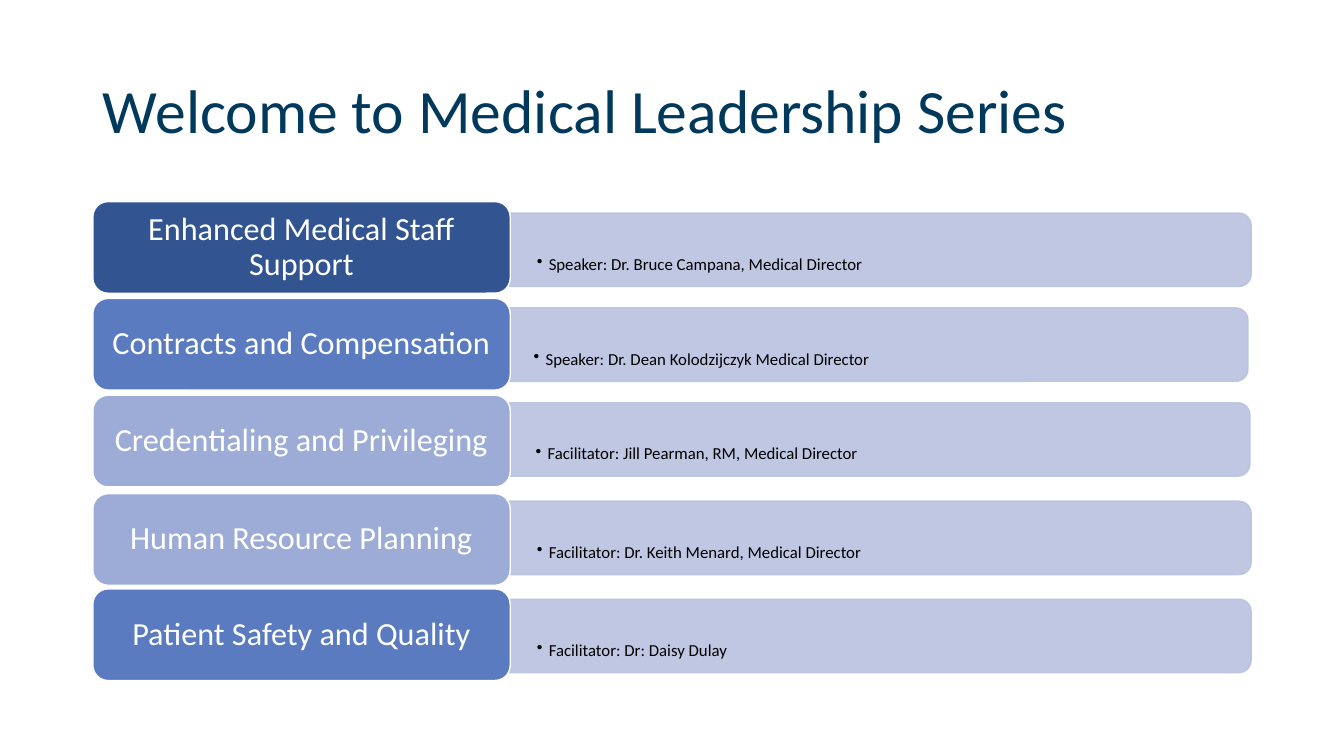
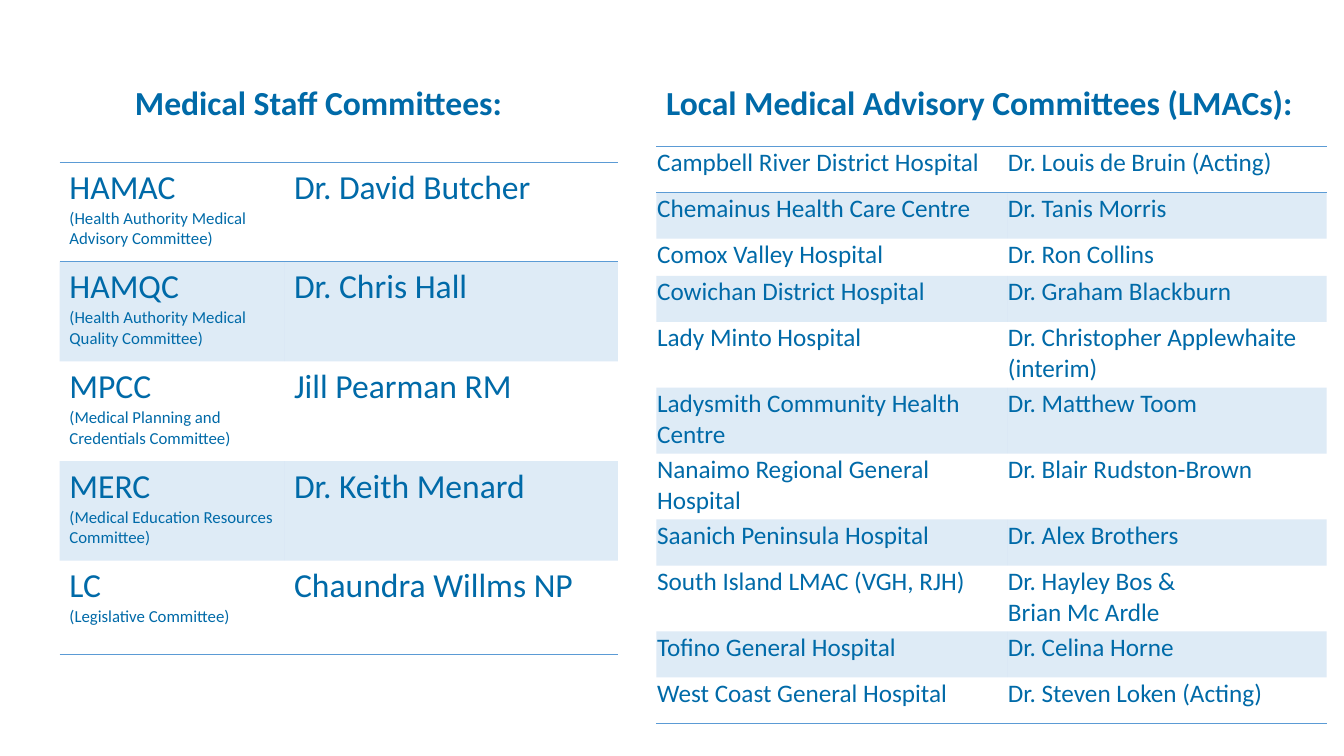
from dataclasses import dataclass

import lxml.etree
import pptx
import pptx.dml.color
import pptx.enum.shapes
import pptx.enum.text
import pptx.oxml.ns
import pptx.shapes.autoshape
import pptx.slide
import pptx.table
import pptx.text.text
import pptx.util

Cm = pptx.util.Cm
Pt = pptx.util.Pt
qn = pptx.oxml.ns.qn
Anchor = pptx.enum.text.MSO_ANCHOR
Align = pptx.enum.text.PP_ALIGN
Shape = pptx.enum.shapes.MSO_SHAPE


@dataclass(frozen=True)
class Theme:
    font: str = "Calibri"
    title: str = "00395B"
    committee: str = "006AA8"
    rule: str = "5B9BD5"
    bar: str = "B9C2E1"
    navy: str = "325491"
    blue: str = "5B7BC0"
    pale: str = "9DACD6"
    white: str = "FFFFFF"
    black: str = "000000"
    title_size: int = 44
    heading_size: int = 24
    label_size: int = 23
    body_size: int = 18
    small_size: int = 12
    bar_alpha: int = 90
    band_alpha: int = 20


THEME = Theme()


@dataclass(frozen=True)
class Session:
    topic: str
    host: str
    colour: str
    label_top: float
    bar_top: float
    bar_left: float = 12.84


@dataclass(frozen=True)
class Committee:
    name: str
    chair: str
    height: float


@dataclass(frozen=True)
class CommitteeTable:
    heading: str
    heading_left: float
    heading_width: float
    left: float
    top: float
    widths: tuple[float, float]
    margins: tuple[float, float, float, float]
    sizes: tuple[int, int]
    rows: list[Committee]


SESSIONS = [
    Session("Enhanced Medical Staff Support", "Speaker: Dr. Bruce Campana, Medical Director",
            THEME.navy, 5.08, 5.37),
    Session("Contracts and Compensation", "Speaker: Dr. Dean Kolodzijczyk Medical Director",
            THEME.blue, 7.52, 7.76, 12.76),
    Session("Credentialing and Privileging", "Facilitator: Jill Pearman, RM, Medical Director",
            THEME.pale, 9.96, 10.15, 12.81),
    Session("Human Resource Planning", "Facilitator: Dr. Keith Menard, Medical Director",
            THEME.pale, 12.44, 12.63),
    Session("Patient Safety and Quality", "Facilitator: Dr: Daisy Dulay",
            THEME.blue, 14.84, 15.1),
]
LABEL_LEFT, LABEL_WIDTH, LABEL_HEIGHT = 2.34, 10.52, 2.31
BAR_WIDTH, BAR_HEIGHT = 18.69, 1.85

SHORT, ONE_LINE, TWO_LINES = 0.94, 1.16, 1.66

STAFF = CommitteeTable(
    "Medical Staff Committees:", 3.15, 9.91, 1.5, 4.09, (5.66, 8.41),
    (0.25, 0.13, 0.25, 0.13), (THEME.heading_size, THEME.small_size),
    [
        Committee("HAMAC\v(Health Authority Medical Advisory Committee)", "Dr. David Butcher", 2.51),
        Committee("HAMQC\v(Health Authority Medical Quality Committee)", "Dr. Chris Hall", 2.51),
        Committee("MPCC\v(Medical Planning and Credentials Committee)", "Jill Pearman RM", 2.51),
        Committee("MERC\v(Medical Education Resources Committee)", "Dr. Keith Menard", 2.51),
        Committee("LC\v(Legislative Committee)", "Chaundra Willms NP", 2.36),
    ])
LOCAL = CommitteeTable(
    "Local Medical Advisory Committees (LMACs):", 16.54, 16.48, 16.54, 3.69, (8.84, 8.05),
    (0.02, 0.02, 0.02, 0), (THEME.body_size, THEME.body_size),
    [
        Committee("Campbell River District Hospital", "Dr. Louis de Bruin (Acting)", ONE_LINE),
        Committee("Chemainus Health Care Centre", "Dr. Tanis Morris", ONE_LINE),
        Committee("Comox Valley Hospital", "Dr. Ron Collins", SHORT),
        Committee("Cowichan District Hospital", "Dr. Graham Blackburn", ONE_LINE),
        Committee("Lady Minto Hospital", "Dr. Christopher Applewhaite (interim)", TWO_LINES),
        Committee("Ladysmith Community Health Centre", "Dr. Matthew Toom", TWO_LINES),
        Committee("Nanaimo Regional General Hospital", "Dr. Blair Rudston-Brown", TWO_LINES),
        Committee("Saanich Peninsula Hospital", "Dr. Alex Brothers", ONE_LINE),
        Committee("South Island LMAC (VGH, RJH)", "Dr. Hayley Bos &\vBrian Mc Ardle", TWO_LINES),
        Committee("Tofino General Hospital", "Dr. Celina Horne", ONE_LINE),
        Committee("West Coast General Hospital", "Dr. Steven Loken (Acting)", ONE_LINE),
    ])


def rgb(colour: str) -> pptx.dml.color.RGBColor:
    return pptx.dml.color.RGBColor.from_string(colour)


def fade(parent: lxml.etree._Element, percent: int) -> None:
    """Make the solid fill directly inside parent partly transparent."""
    clr = parent.find(f"{qn('a:solidFill')}/{qn('a:srgbClr')}")
    lxml.etree.SubElement(clr, qn("a:alpha"), val=str(percent * 1000))


def style(p: pptx.text.text._Paragraph, colour: str, *sizes: int, bold: bool = False) -> None:
    """Format the runs of p; the last size serves all remaining runs."""
    for i, r in enumerate(p.runs):
        r.font.name = THEME.font
        r.font.size = Pt(sizes[min(i, len(sizes) - 1)])
        r.font.bold = bold
        r.font.color.rgb = rgb(colour)


def set_margins(box, left: float, top: float, right: float, bottom: float) -> None:
    box.margin_left, box.margin_top = Cm(left), Cm(top)
    box.margin_right, box.margin_bottom = Cm(right), Cm(bottom)


def add_filled(s: pptx.slide.Slide, kind: Shape, left: float, top: float, width: float,
               height: float, fill: str, line: str) -> pptx.shapes.autoshape.Shape:
    sp = s.shapes.add_shape(kind, Cm(left), Cm(top), Cm(width), Cm(height))
    sp.shadow.inherit = False
    sp.fill.solid()
    sp.fill.fore_color.rgb = rgb(fill)
    sp.line.color.rgb = rgb(line)
    sp.line.width = Pt(1)
    return sp


def add_bar(s: pptx.slide.Slide, session: Session) -> None:
    """Draw the bar, a shape with two round corners turned to face right."""
    shift = (BAR_WIDTH - BAR_HEIGHT) / 2
    sp = add_filled(s, Shape.ROUND_2_SAME_RECTANGLE, session.bar_left + shift,
                    session.bar_top - shift, BAR_HEIGHT, BAR_WIDTH, THEME.bar, THEME.bar)
    sp.rotation = 90
    props = sp._element.spPr
    fade(props, THEME.bar_alpha)
    fade(props.find(qn("a:ln")), THEME.bar_alpha)


def add_host(s: pptx.slide.Slide, session: Session) -> None:
    sp = s.shapes.add_textbox(Cm(session.bar_left), Cm(session.bar_top + 0.09),
                              Cm(BAR_WIDTH - 0.1), Cm(BAR_HEIGHT - 0.18))
    tf = sp.text_frame
    tf.word_wrap = True
    tf.vertical_anchor = Anchor.BOTTOM
    set_margins(tf, 0.69, 0.36, 0.69, 0.36)
    tf.text = session.host
    p = tf.paragraphs[0]
    p.line_spacing = 0.9
    props = p._p.get_or_add_pPr()
    props.set("marL", str(Cm(0.3)))
    props.set("indent", str(-Cm(0.3)))
    lxml.etree.SubElement(props, qn("a:buChar"), char="•")
    style(p, THEME.black, THEME.small_size)


def add_label(s: pptx.slide.Slide, session: Session) -> None:
    sp = add_filled(s, Shape.ROUNDED_RECTANGLE, LABEL_LEFT, session.label_top,
                    LABEL_WIDTH, LABEL_HEIGHT, session.colour, THEME.white)
    tf = sp.text_frame
    tf.word_wrap = True
    tf.vertical_anchor = Anchor.MIDDLE
    set_margins(tf, 0.25, 0.12, 0.25, 0.12)
    tf.text = session.topic
    p = tf.paragraphs[0]
    p.alignment = Align.CENTER
    p.line_spacing = 0.9
    style(p, THEME.white, THEME.label_size)


def set_title(s: pptx.slide.Slide, text: str) -> None:
    sp = s.shapes.title
    sp.left, sp.top, sp.width, sp.height = Cm(2.34), Cm(1.02), Cm(29.21), Cm(3.68)
    tf = sp.text_frame
    tf.text = text
    tf.vertical_anchor = Anchor.MIDDLE
    p = tf.paragraphs[0]
    p.alignment = Align.LEFT
    p.line_spacing = 0.9
    style(p, THEME.title, THEME.title_size)


def add_rule(cell: pptx.table._Cell, edge: str) -> None:
    """Draw a cell border; edge is lnT or lnB."""
    ln = lxml.etree.SubElement(cell._tc.get_or_add_tcPr(), qn(f"a:{edge}"), w=str(Pt(1)))
    fill = lxml.etree.SubElement(ln, qn("a:solidFill"))
    lxml.etree.SubElement(fill, qn("a:srgbClr"), val=THEME.rule)


def fill_cell(cell: pptx.table._Cell, text: str, row: int, spec_table: CommitteeTable,
              sizes: tuple[int, ...]) -> None:
    set_margins(cell, *spec_table.margins)
    cell.text = text
    style(cell.text_frame.paragraphs[0], THEME.committee, *sizes)
    if row == 0:
        add_rule(cell, "lnT")
    if row in (0, len(spec_table.rows) - 1):
        add_rule(cell, "lnB")
    if row % 2:
        cell.fill.solid()
        cell.fill.fore_color.rgb = rgb(THEME.rule)
        fade(cell._tc.tcPr, THEME.band_alpha)
    else:
        cell.fill.background()


def add_committees(s: pptx.slide.Slide, ct: CommitteeTable) -> None:
    """Draw a heading with its two-column table."""
    heading = s.shapes.add_textbox(Cm(ct.heading_left), Cm(1.93), Cm(ct.heading_width), Cm(1.28))
    heading.text_frame.word_wrap = False
    heading.text_frame.text = ct.heading
    style(heading.text_frame.paragraphs[0], THEME.committee, THEME.heading_size, bold=True)

    frame = s.shapes.add_table(len(ct.rows), 2, Cm(ct.left), Cm(ct.top), Cm(sum(ct.widths)),
                               Cm(sum(c.height for c in ct.rows)))
    table = frame.table
    table.first_row = table.horz_banding = False
    no_grid = "{2D5ABB26-0587-4C30-8999-92F81FD0307C}"
    table._tbl.tblPr.find(qn("a:tableStyleId")).text = no_grid
    for column, width in zip(table.columns, ct.widths):
        column.width = Cm(width)
    for i, committee in enumerate(ct.rows):
        table.rows[i].height = Cm(committee.height)
        fill_cell(table.cell(i, 0), committee.name, i, ct, ct.sizes)
        fill_cell(table.cell(i, 1), committee.chair, i, ct, ct.sizes[:1])


def main() -> None:
    prs = pptx.Presentation()
    prs.slide_width, prs.slide_height = Cm(33.87), Cm(19.05)

    s = prs.slides.add_slide(prs.slide_layouts.get_by_name("Title Only"))
    set_title(s, "Welcome to Medical Leadership Series")
    for session in SESSIONS:
        add_bar(s, session)
        add_host(s, session)
        add_label(s, session)

    s = prs.slides.add_slide(prs.slide_layouts.get_by_name("Blank"))
    for ct in (STAFF, LOCAL):
        add_committees(s, ct)

    prs.save("out.pptx")


if __name__ == "__main__":
    main()
